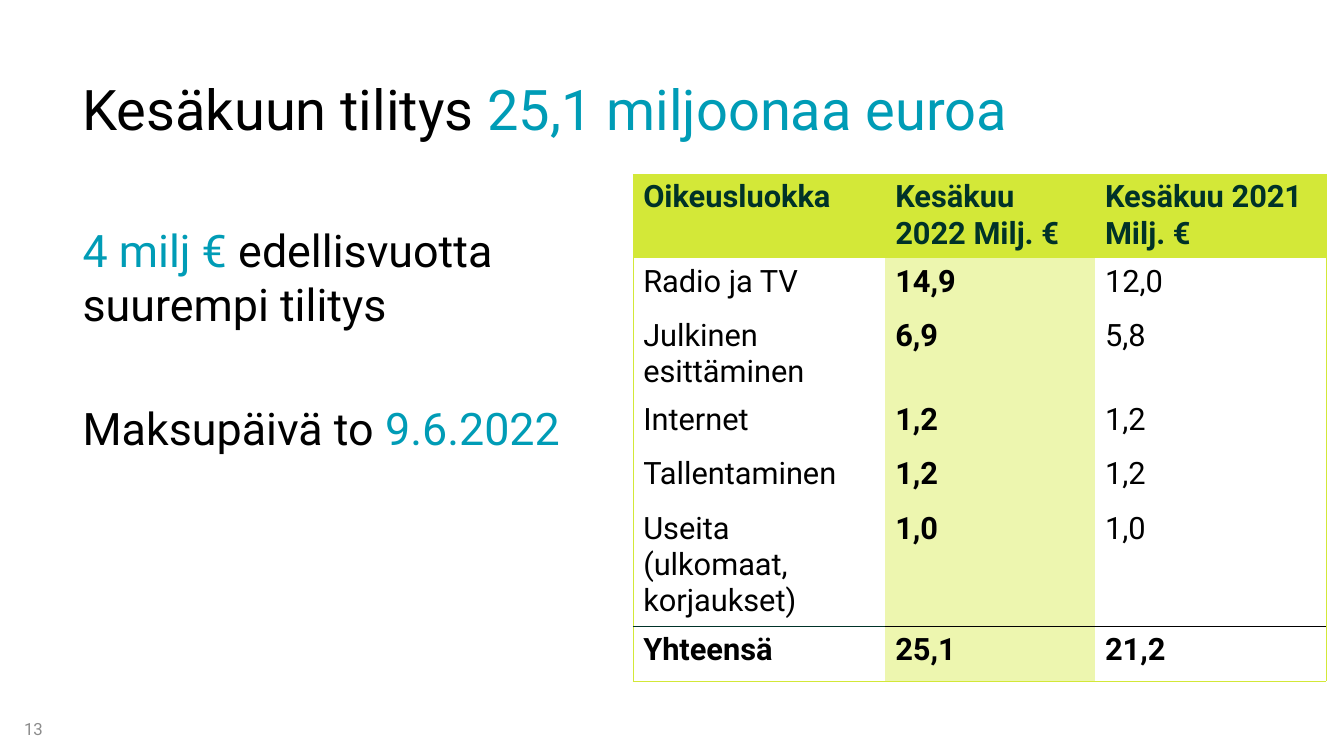
from lxml.etree import SubElement
from pptx import Presentation
from pptx.dml.color import RGBColor
from pptx.enum.text import MSO_ANCHOR as Anchor
from pptx.oxml.ns import qn
from pptx.util import Inches, Pt

FONT = "Roboto"
BLACK, TEAL, GREY = "000000", "009CB6", "8C8C8C"
LIME, PALE_LIME, FOREST = "D3E838", "EDF6AF", "003228"

COLUMN_WIDTHS = [2.5, 2.08, 2.29]
ROW_HEIGHTS = [0.81, 0.54, 0.82, 0.54, 0.54, 1.17, 0.54]
SETTLEMENT = [
    ("Oikeusluokka", "Kesäkuu 2022 Milj. €", "Kesäkuu 2021 Milj. €"),
    ("Radio ja TV", "14,9", "12,0"),
    ("Julkinen esittäminen", "6,9", "5,8"),
    ("Internet", "1,2", "1,2"),
    ("Tallentaminen", "1,2", "1,2"),
    ("Useita (ulkomaat, korjaukset)", "1,0", "1,0"),
    ("Yhteensä", "25,1", "21,2"),
]


def rgb(color):
    """Turn a hex string into a colour."""
    return RGBColor.from_string(color)


def add_text(slide, box, paragraphs, size, anchor=Anchor.TOP, gap=0, spacing=None):
    """Place paragraphs made of (text, colour) runs in a box."""
    frame = slide.shapes.add_textbox(*map(Inches, box)).text_frame
    frame.word_wrap = True
    frame.vertical_anchor = anchor
    for index, runs in enumerate(paragraphs):
        paragraph = frame.add_paragraph() if index else frame.paragraphs[0]
        if index:
            paragraph.space_before = Pt(gap)
        if spacing:
            paragraph.line_spacing = spacing
        paragraph.font.name = FONT
        paragraph.font.size = Pt(size)
        for text, color in runs:
            run = paragraph.add_run()
            run.text = text
            run.font.color.rgb = rgb(color)


def set_borders(cell, borders):
    """Draw the given (colour, width) sides of a cell and clear the others."""
    properties = cell._tc.get_or_add_tcPr()
    for side in "LRTB":
        color, width = borders.get(side, (None, 0))
        line = SubElement(properties, qn(f"a:ln{side}"), w=str(Pt(width)))
        if color:
            fill = SubElement(line, qn("a:solidFill"))
            SubElement(fill, qn("a:srgbClr"), val=color)
        else:
            SubElement(line, qn("a:noFill"))


def cell_borders(row, column):
    """Return the outer frame and the rule above the totals for one cell."""
    total = len(SETTLEMENT) - 1
    frame, rule = (LIME, 0.5), (BLACK if column else FOREST, 1)
    edges = {
        "L": frame if column == 0 else None,
        "R": frame if column == len(COLUMN_WIDTHS) - 1 else None,
        "T": {0: frame, total: rule}.get(row),
        "B": {total - 1: rule, total: frame}.get(row),
    }
    return {side: edge for side, edge in edges.items() if edge}


def add_settlement_table(slide, left, top):
    """Place the table of settlements by rights category."""
    table = slide.shapes.add_table(
        len(SETTLEMENT), len(COLUMN_WIDTHS), Inches(left), Inches(top),
        Inches(sum(COLUMN_WIDTHS)), Inches(sum(ROW_HEIGHTS))).table
    table.first_row = table.horz_banding = False
    for column, width in zip(table.columns, COLUMN_WIDTHS):
        column.width = Inches(width)
    for row, height in zip(table.rows, ROW_HEIGHTS):
        row.height = Inches(height)
    for row, values in enumerate(SETTLEMENT):
        for column, value in enumerate(values):
            cell = table.cell(row, column)
            set_borders(cell, cell_borders(row, column))
            if row == 0 or column == 1:
                cell.fill.solid()
                cell.fill.fore_color.rgb = rgb(PALE_LIME if row else LIME)
            else:
                cell.fill.background()
            cell.text = value
            font = cell.text_frame.paragraphs[0].font
            font.name = FONT
            font.size = Pt(22)
            font.bold = row in (0, len(SETTLEMENT) - 1) or column == 1
            font.color.rgb = rgb(BLACK if row else FOREST)


def add_settlement_slide(deck):
    """Build the June settlement slide."""
    slide = deck.slides.add_slide(deck.slide_layouts[6])
    add_text(slide, (0.72, 0.39, 11.89, 1.45),
             [[("Kesäkuun tilitys ", BLACK), ("25,1 miljoonaa euroa", TEAL)]],
             40, Anchor.MIDDLE, spacing=0.9)
    add_text(slide, (0.72, 2.16, 5.39, 4.59),
             [[("4 milj € ", TEAL), ("edellisvuotta suurempi tilitys", BLACK)],
              [("Maksupäivä to ", BLACK), ("9.6.2022", TEAL)]],
             32, gap=50)
    add_text(slide, (0.14, 7.1, 0.77, 0.27), [[("13", GREY)]], 12, Anchor.MIDDLE)
    add_settlement_table(slide, 6.28, 1.73)


def main():
    """Create and save the presentation."""
    deck = Presentation()
    deck.slide_width, deck.slide_height = Inches(13.33), Inches(7.5)
    add_settlement_slide(deck)
    deck.save("out.pptx")


if __name__ == "__main__":
    main()
